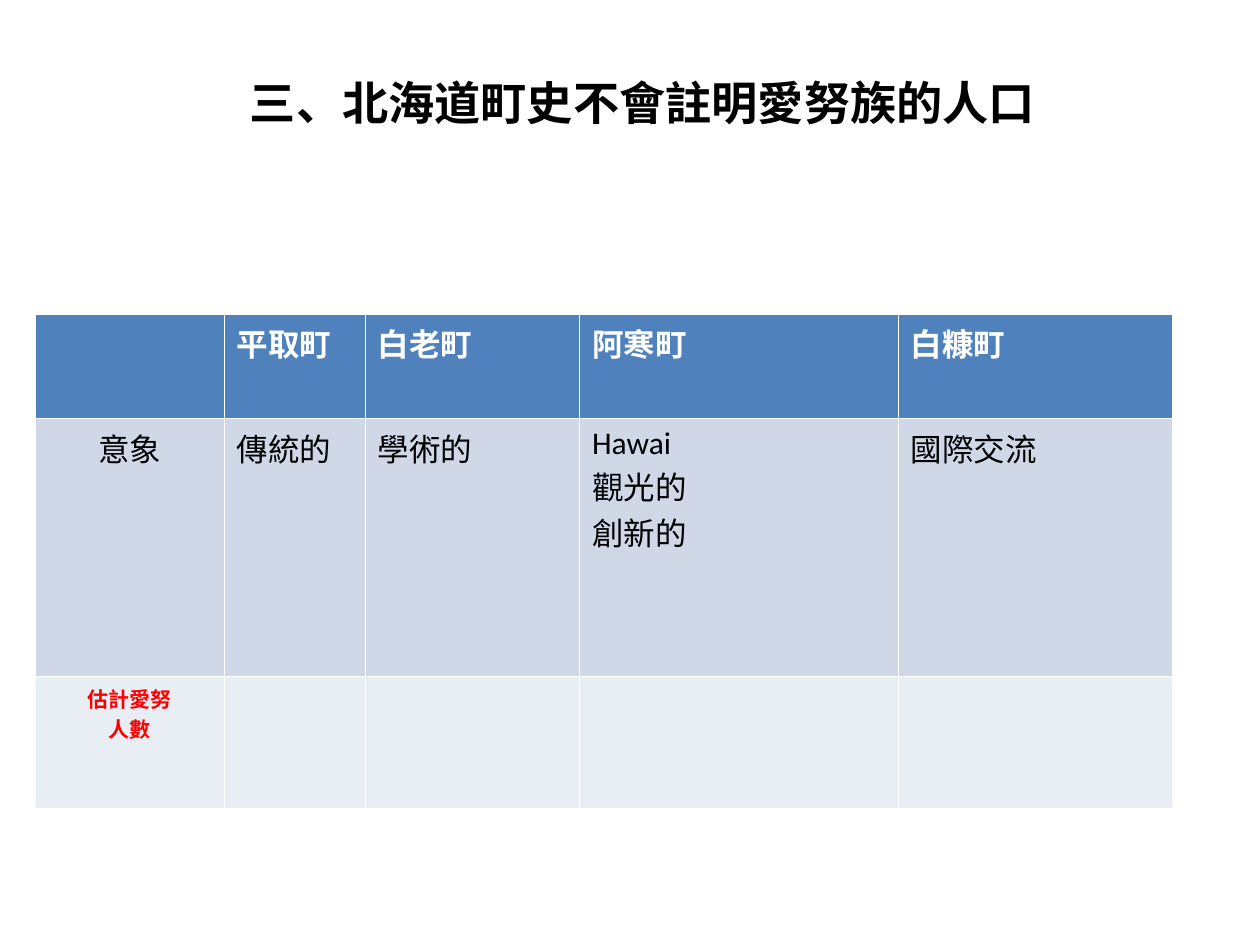
from pptx import Presentation
from pptx.dml.color import RGBColor
from pptx.enum.text import MSO_ANCHOR, PP_ALIGN
from pptx.util import Inches, Pt

WHITE = RGBColor(0xFF, 0xFF, 0xFF)
BLACK = RGBColor(0x00, 0x00, 0x00)
RED = RGBColor(0xFF, 0x00, 0x00)
HEADER_BLUE = RGBColor(0x4F, 0x81, 0xBD)
BAND_DARK = RGBColor(0xD0, 0xD8, 0xE8)
BAND_LIGHT = RGBColor(0xE9, 0xED, 0xF4)

COLUMN_WIDTHS = [1.5, 1.12, 1.7, 2.53, 2.18]
ROW_HEIGHTS = [0.83, 2.05, 1.05]
ROW_FILLS = [HEADER_BLUE, BAND_DARK, BAND_LIGHT]
ROW_FONTS = [
    ("Calibri", 18, True, WHITE),
    ("Calibri", 18, False, BLACK),
    ("Noto Sans CJK SC", 12, True, RED),
]
TOWN_ROWS = [
    ["", "平取町", "白老町", "阿寒町", "白糠町"],
    ["意象", "傳統的", "學術的", "Hawai\n觀光的\n創新的", "國際交流"],
    ["估計愛努\n人數", "", "", "", ""],
]


def add_span(para, text, name, size, bold, color):
    """Add one formatted run to a paragraph."""
    span = para.add_run()
    span.text = text
    span.font.name = name
    span.font.size = Pt(size)
    span.font.bold = bold
    span.font.color.rgb = color


def place_title(page, left, top, width, height):
    """Place the heading in the title placeholder."""
    box = page.shapes.title
    box.left, box.top = Inches(left), Inches(top)
    box.width, box.height = Inches(width), Inches(height)
    frame = box.text_frame
    frame.word_wrap = True
    frame.vertical_anchor = MSO_ANCHOR.MIDDLE
    frame.margin_bottom = Inches(0.19)
    para = frame.paragraphs[0]
    para.alignment = PP_ALIGN.CENTER
    para.line_spacing = 0.8
    add_span(para, "三、北海道町史不會註明愛努族的人口", "Calibri", 26.4, True, BLACK)


def fill_cell(cell, text, fill, font, centred):
    """Colour a cell and write each line of its text as a paragraph."""
    cell.fill.solid()
    cell.fill.fore_color.rgb = fill
    if not text:
        return
    frame = cell.text_frame
    for index, line in enumerate(text.split("\n")):
        para = frame.add_paragraph() if index else frame.paragraphs[0]
        if centred:
            para.alignment = PP_ALIGN.CENTER
        add_span(para, line, *font)


def place_town_table(page, left, top):
    """Place the table comparing the towns."""
    table = page.shapes.add_table(
        len(ROW_HEIGHTS), len(COLUMN_WIDTHS), Inches(left), Inches(top),
        Inches(sum(COLUMN_WIDTHS)), Inches(sum(ROW_HEIGHTS)),
    ).table
    for column, width in zip(table.columns, COLUMN_WIDTHS):
        column.width = Inches(width)
    for row, height, texts, fill, font in zip(
        table.rows, ROW_HEIGHTS, TOWN_ROWS, ROW_FILLS, ROW_FONTS
    ):
        row.height = Inches(height)
        for index, (cell, text) in enumerate(zip(row.cells, texts)):
            fill_cell(cell, text, fill, font, centred=index == 0)


def main():
    """Build and save the deck."""
    deck = Presentation()
    deck.slide_width, deck.slide_height = Inches(10), Inches(7.5)
    page = deck.slides.add_slide(deck.slide_layouts[5])
    place_town_table(page, 0.28, 2.49)
    place_title(page, 0.2, 0.3, 9.8, 1.25)
    deck.save("out.pptx")


if __name__ == "__main__":
    main()
